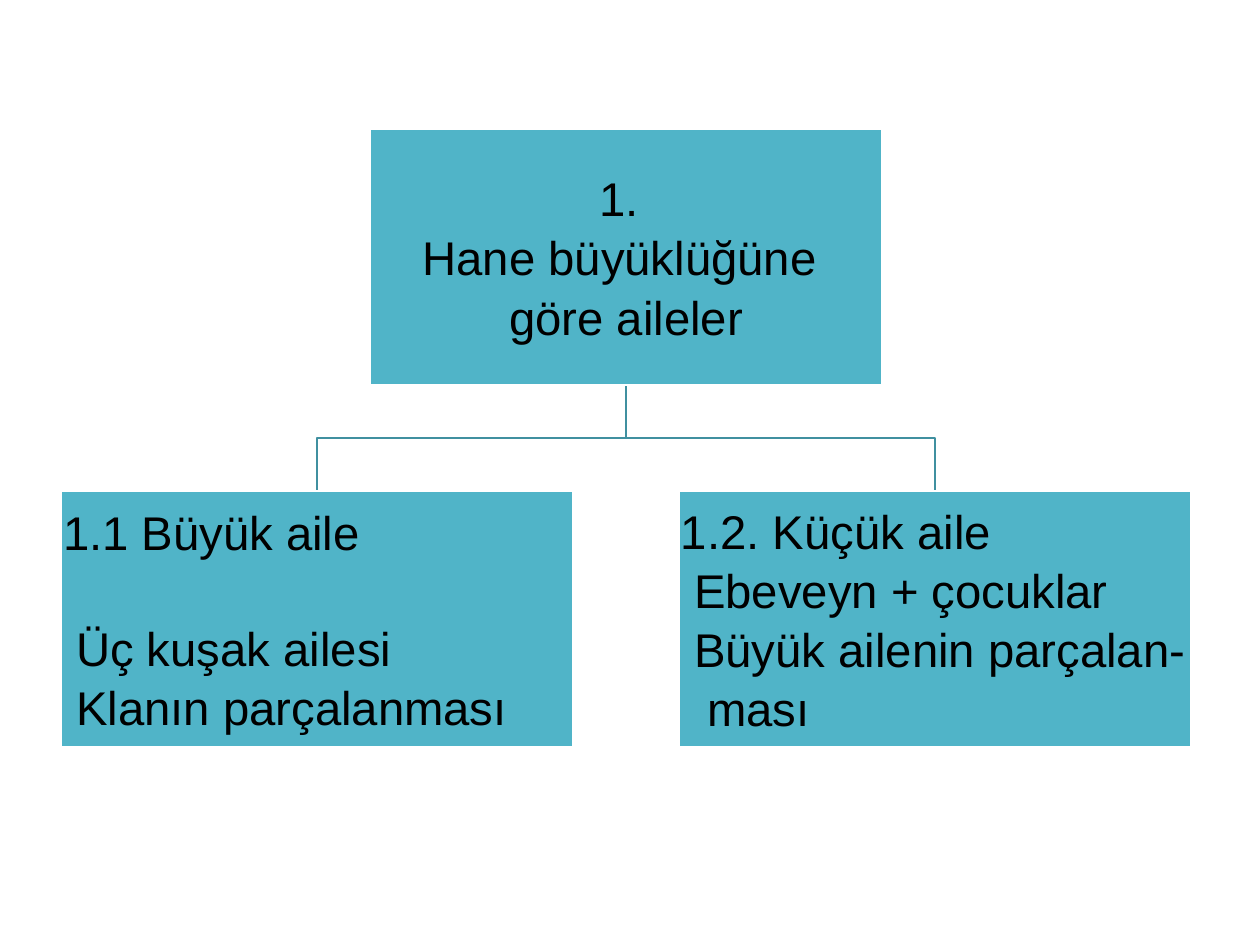
"""Build a slide with a two-level tree of family types by household size."""
from pptx import Presentation
from pptx import util as u
from pptx.dml.color import RGBColor
from pptx.enum import shapes, text

PX = 7257
BOX_W, BOX_H = 512, 256
CENTER_X, ROOT_Y, CHILD_Y = 626, 129, 491
CHILD_OFFSET = 309
FILL, EDGE, BRANCH, INK = "50B4C8", "FFFFFF", "4090A0", "000000"
SIZE, SPACING, SKIPPED_LINE = 27, 1.4, 33.8

ROOT = ["1. ", "Hane büyüklüğüne ", "göre aileler"]
CHILDREN = [
    (["1.1 Büyük aile", " Üç kuşak ailesi", " Klanın parçalanması"], {1}),
    (["1.2. Küçük aile", " Ebeveyn + çocuklar", " Büyük ailenin parçalan-", "  ması"], set()),
]


def color(value):
    return RGBColor.from_string(value)


def set_line(shape, value):
    shape.shadow.inherit = False
    shape.line.color.rgb = color(value)
    shape.line.width = u.Pt(1)


def add_branch(page, child_x):
    start_y = ROOT_Y + BOX_H
    middle_y = (start_y + CHILD_Y) // 2
    builder = page.shapes.build_freeform(CENTER_X, start_y, scale=PX)
    builder.add_line_segments(
        [(CENTER_X, middle_y), (child_x, middle_y), (child_x, CHILD_Y)], close=False)
    branch = builder.convert_to_shape()
    branch.fill.background()
    set_line(branch, BRANCH)


def add_box(page, center_x, top, lines, align, after_gap=()):
    box = page.shapes.add_shape(
        shapes.MSO_SHAPE.RECTANGLE,
        *(n * PX for n in (center_x - BOX_W // 2, top, BOX_W, BOX_H)))
    box.fill.solid()
    box.fill.fore_color.rgb = color(FILL)
    set_line(box, EDGE)
    frame = box.text_frame
    frame.word_wrap = True
    frame.vertical_anchor = text.MSO_ANCHOR.MIDDLE
    frame.margin_left = frame.margin_right = 2 * PX
    frame.margin_top = frame.margin_bottom = 2 * PX
    frame.text = "\n".join(lines)
    for index, para in enumerate(frame.paragraphs):
        para.alignment = align
        para.space_before = u.Pt(SKIPPED_LINE if index in after_gap else SPACING)
        for span in para.runs:
            span.font.name = "Arial"
            span.font.size = u.Pt(SIZE)
            span.font.color.rgb = color(INK)


def main():
    deck = Presentation()
    deck.slide_width, deck.slide_height = u.Inches(10), u.Inches(7.5)
    page = deck.slides.add_slide(deck.slide_layouts[6])
    centers = [CENTER_X - CHILD_OFFSET, CENTER_X + CHILD_OFFSET]
    for child_x in reversed(centers):
        add_branch(page, child_x)
    add_box(page, CENTER_X, ROOT_Y, ROOT, text.PP_ALIGN.CENTER)
    for child_x, (lines, after_gap) in zip(centers, CHILDREN):
        add_box(page, child_x, CHILD_Y, lines, text.PP_ALIGN.LEFT, after_gap)
    deck.save("out.pptx")


if __name__ == "__main__":
    main()
